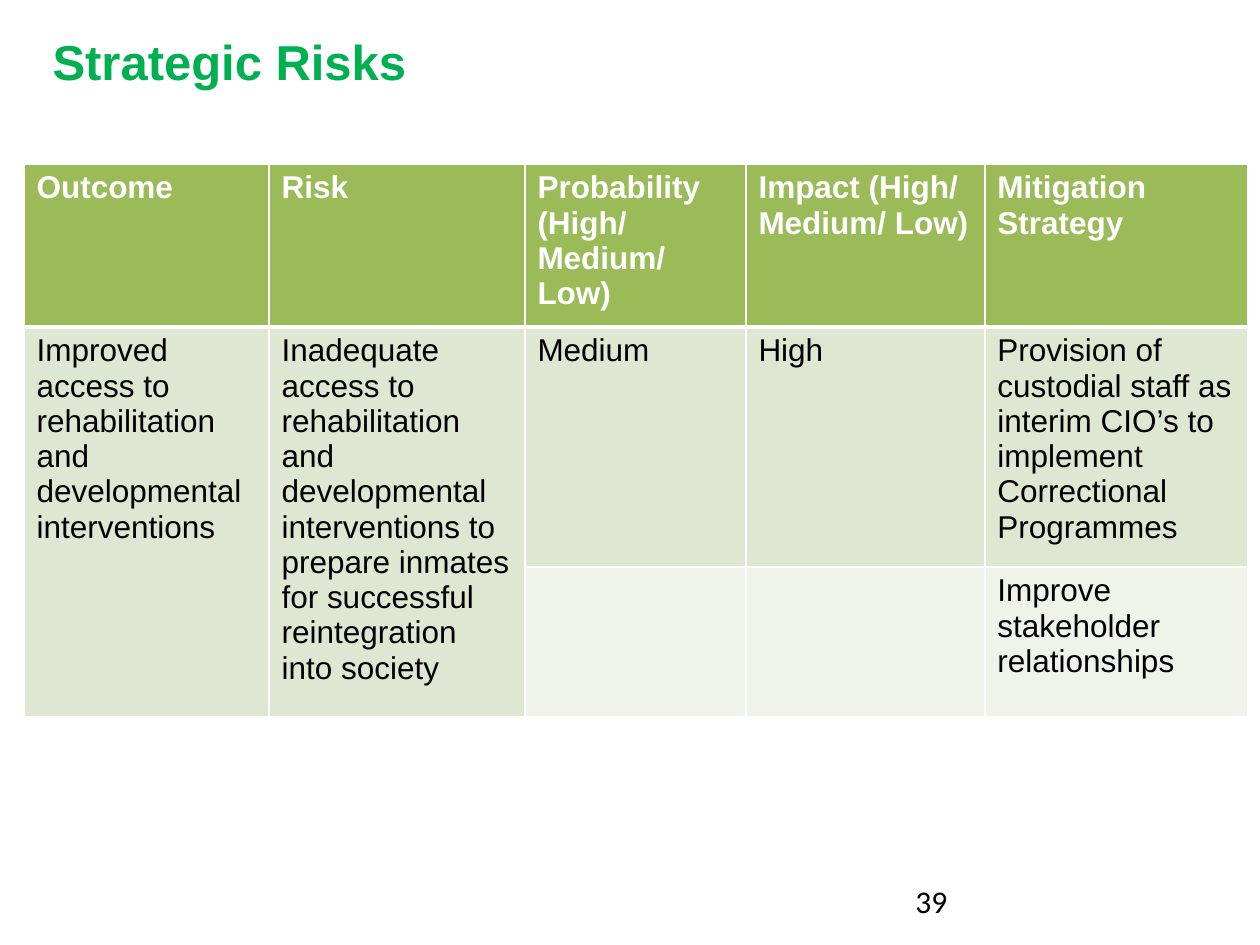
"""Build the strategic risks slide with its risk table."""
from lxml import etree
from pptx import Presentation, util as u
from pptx.dml.color import RGBColor
from pptx.enum import text
from pptx.oxml.ns import qn

PX = 914400 / 126
TITLE = "Strategic Risks"
PAGE = "39"
HEADER = ["Outcome", "Risk", "Probability (High/ Medium/ Low)",
          "Impact (High/ Medium/ Low)", "Mitigation Strategy"]
RISKS = [
    ["Improved access to rehabilitation and developmental interventions",
     "Inadequate access to rehabilitation and developmental interventions "
     "to prepare inmates for successful reintegration into society",
     "Medium", "High",
     "Provision of custodial staff as interim CIO’s to implement "
     "Correctional Programmes"],
    ["", "", "", "", "Improve stakeholder relationships"],
]
COLS = [245, 256, 221, 239, 263]
ROWS = [163, 240, 150]
FILLS = ["9BBB59", "DEE7D1", "EFF3EA"]
MERGED_COLS = [0, 1]


def px(n):
    return u.Emu(round(n * PX))


def color(value):
    return RGBColor.from_string(value)


def write(tf, content, size=18, font="Arial", fill="000000", bold=False):
    tf.word_wrap = True
    p = tf.paragraphs[0]
    p.alignment = text.PP_ALIGN.LEFT
    p.font.size = u.Pt(size)
    if content:
        r = p.add_run()
        r.text = content
        r.font.name, r.font.size, r.font.bold = font, u.Pt(size), bold
        r.font.color.rgb = color(fill)


def set_borders(cell, **widths):
    tc_pr = cell._tc.get_or_add_tcPr()
    for i, side in enumerate("LRTB"):
        ln = etree.Element(qn(f"a:ln{side}"), w=str(u.Pt(widths.get(side, 1))))
        fill = etree.SubElement(ln, qn("a:solidFill"))
        etree.SubElement(fill, qn("a:srgbClr"), val="FFFFFF")
        tc_pr.insert(i, ln)


def add_risk_table(s):
    table = s.shapes.add_table(len(ROWS), len(COLS), px(24), px(164),
                               px(sum(COLS)), px(sum(ROWS))).table
    for column, width in zip(table.columns, COLS):
        column.width = px(width)
    for i, (row, height) in enumerate(zip([HEADER] + RISKS, ROWS)):
        table.rows[i].height = px(height)
        for j, content in enumerate(row):
            cell = table.cell(i, j)
            cell.fill.solid()
            cell.fill.fore_color.rgb = color(FILLS[i])
            set_borders(cell, T=3 if i == 1 else 1, B=3 if i == 0 else 1)
            write(cell.text_frame, content, bold=i == 0,
                  fill="FFFFFF" if i == 0 else "000000")
    for j in MERGED_COLS:
        table.cell(1, j).merge(table.cell(2, j))


def main():
    prs = Presentation()
    prs.slide_width, prs.slide_height = px(1260), px(945)
    s = prs.slides.add_slide(prs.slide_layouts[5])
    title = s.shapes.title
    title.left, title.top, title.width, title.height = map(px, (40, 25, 1191, 72))
    title.text_frame.vertical_anchor = text.MSO_ANCHOR.TOP
    write(title.text_frame, TITLE, size=28, fill="00B050", bold=True)
    add_risk_table(s)
    number = s.shapes.add_textbox(*map(px, (903, 876, 294, 50)))
    write(number.text_frame, PAGE, font="Calibri")
    prs.save("out.pptx")


if __name__ == "__main__":
    main()
